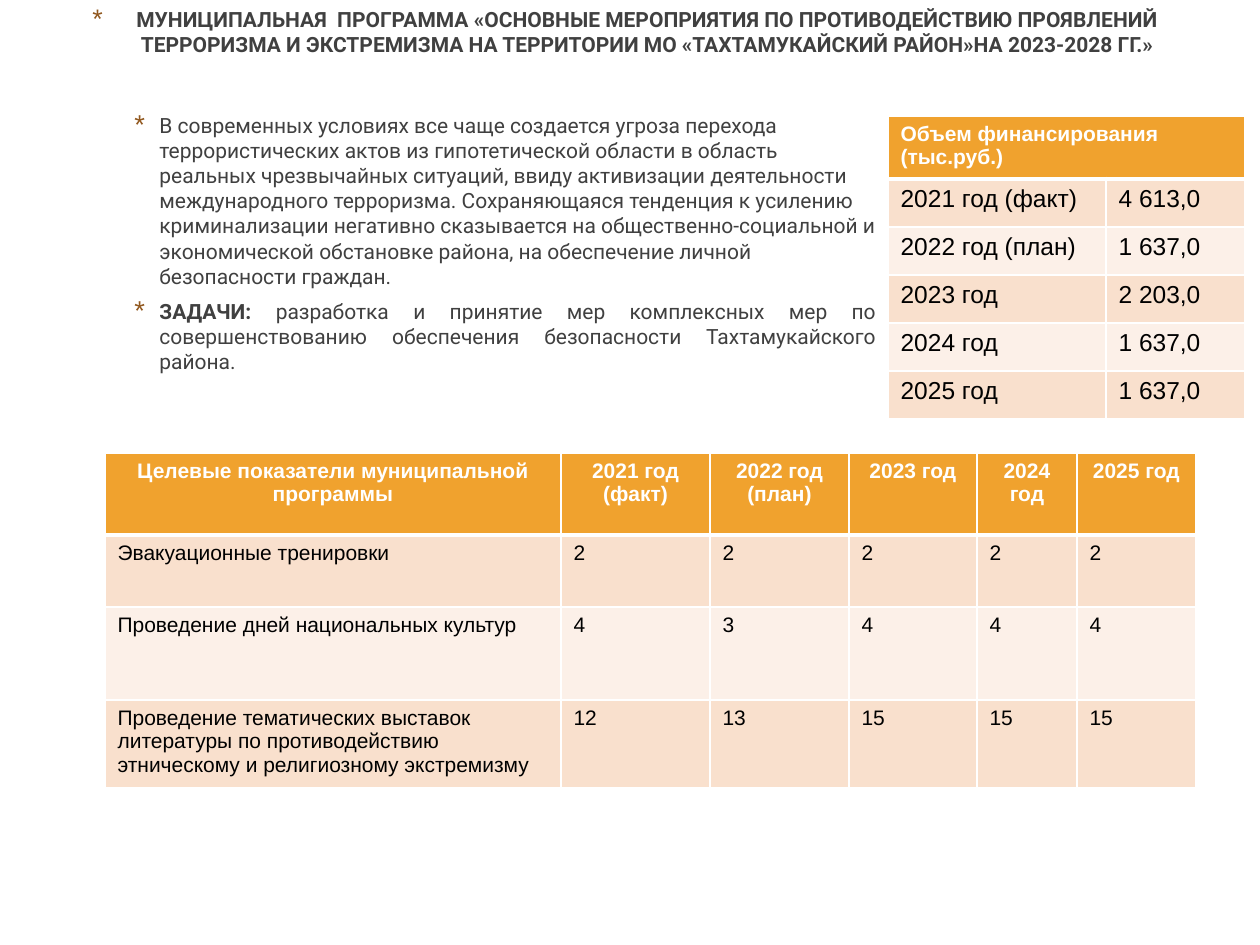
import lxml.etree
import pptx
import pptx.dml.color
import pptx.enum.text
import pptx.oxml.ns
import pptx.util

COLOURS = {
    "header": "F0A22E",
    "odd_row": "F9E0CD",
    "even_row": "FCF0E8",
    "border": "FFFFFF",
    "header_text": "FFFFFF",
    "cell_text": "000000",
    "text": "404040",
    "bullet": "91581F",
}
ALIGN = pptx.enum.text.PP_ALIGN
EMU_PER_INCH = 914400
PX_PER_INCH = 126


def emu(px):
    return pptx.util.Emu(round(px * EMU_PER_INCH / PX_PER_INCH))


def add_element(parent, tag, **attributes):
    return lxml.etree.SubElement(parent, pptx.oxml.ns.qn(tag), attributes)


class SlideBuilder:
    def __init__(self, page):
        self.page = page

    def add_span(self, para, words, colour, **font):
        span = para.add_run()
        span.text = words
        span.font.color.rgb = pptx.dml.color.RGBColor.from_string(COLOURS[colour])
        for name, value in font.items():
            setattr(span.font, name, value)

    def bullet(self, para, margin, hanging, percent):
        properties = para._p.get_or_add_pPr()
        properties.set("marL", str(emu(margin)))
        properties.set("indent", str(-emu(hanging)))
        colour = add_element(properties, "a:buClr")
        add_element(colour, "a:srgbClr", val=COLOURS["bullet"])
        add_element(properties, "a:buSzPct", val=str(percent * 1000))
        add_element(properties, "a:buFont", typeface="Arial")
        add_element(properties, "a:buChar", char="*")

    def bullet_text(self, left, top, width, height, paragraphs, margin, hanging, percent):
        box = self.page.shapes.add_textbox(*map(emu, (left, top, width, height)))
        frame = box.text_frame
        frame.word_wrap = True
        for index, (formats, spans) in enumerate(paragraphs):
            para = frame.add_paragraph() if index else frame.paragraphs[0]
            for name, value in formats.items():
                setattr(para, name, value)
            self.bullet(para, margin, hanging, percent)
            for words, bold in spans:
                self.add_span(para, words, "text", name="Roboto", size=pptx.util.Pt(12), bold=bold)

    def borders(self, cell, row):
        properties = cell._tc.get_or_add_tcPr()
        widths = {"L": 1, "R": 1, "T": 3 if row == 1 else 1, "B": 3 if row == 0 else 1}
        for position, (side, width) in enumerate(widths.items()):
            line = add_element(properties, f"a:ln{side}", w=str(pptx.util.Pt(width)))
            fill = add_element(line, "a:solidFill")
            add_element(fill, "a:srgbClr", val=COLOURS["border"])
            properties.insert(position, line)

    def table(self, left, top, columns, heights, rows, size, header_align):
        frame = self.page.shapes.add_table(
            len(rows), len(columns), *map(emu, (left, top, sum(columns), sum(heights)))
        )
        grid = frame.table
        for column, width in zip(grid.columns, columns):
            column.width = emu(width)
        for row, height in zip(grid.rows, heights):
            row.height = emu(height)
        if len(rows[0]) == 1:
            grid.cell(0, 0).merge(grid.cell(0, len(columns) - 1))
        for r in range(len(rows)):
            header = r == 0
            fill = "header" if header else "odd_row" if r % 2 else "even_row"
            for c in range(len(columns)):
                cell = grid.cell(r, c)
                cell.fill.solid()
                cell.fill.fore_color.rgb = pptx.dml.color.RGBColor.from_string(COLOURS[fill])
                self.borders(cell, r)
            for c, words in enumerate(rows[r]):
                para = grid.cell(r, c).text_frame.paragraphs[0]
                para.alignment = header_align if header else ALIGN.LEFT
                self.add_span(
                    para, words, "header_text" if header else "cell_text",
                    name="Arial", size=pptx.util.Pt(12 if header else size), bold=header,
                )


def main():
    deck = pptx.Presentation()
    deck.slide_width, deck.slide_height = emu(1260), emu(945)
    builder = SlideBuilder(deck.slides.add_slide(deck.slide_layouts[6]))

    title = (
        "МУНИЦИПАЛЬНАЯ  ПРОГРАММА «ОСНОВНЫЕ МЕРОПРИЯТИЯ ПО ПРОТИВОДЕЙСТВИЮ ПРОЯВЛЕНИЙ "
        "ТЕРРОРИЗМА И ЭКСТРЕМИЗМА НА ТЕРРИТОРИИ МО «ТАХТАМУКАЙСКИЙ РАЙОН»НА 2023-2028 ГГ.»"
    )
    builder.bullet_text(
        35, 0, 1181, 106, [({"alignment": ALIGN.CENTER}, [(title, True)])], 44, 44, 128
    )

    funding = [
        ["Объем финансирования (тыс.руб.)"],
        ["2021 год (факт)", "4 613,0"],
        ["2022 год (план)", "1 637,0"],
        ["2023 год", "2 203,0"],
        ["2024 год", "1 637,0"],
        ["2025 год", "1 637,0"],
    ]
    builder.table(888, 116, [218, 139], [58] + [48] * 5, funding, 14, ALIGN.LEFT)

    threat = (
        "В современных условиях все чаще создается угроза перехода террористических актов "
        "из гипотетической области в область реальных чрезвычайных ситуаций, ввиду активизации "
        "деятельности международного терроризма. Сохраняющаяся тенденция к усилению "
        "криминализации негативно сказывается на общественно-социальной и экономической "
        "обстановке района, на обеспечение личной безопасности граждан."
    )
    tasks = (
        "разработка и принятие мер комплексных мер по совершенствованию обеспечения "
        "безопасности Тахтамукайского района."
    )
    spacing = {"space_before": pptx.util.Pt(2.4), "space_after": pptx.util.Pt(3)}
    paragraphs = [
        ({**spacing, "alignment": ALIGN.LEFT}, [(threat, False)]),
        ({**spacing, "alignment": ALIGN.JUSTIFY}, [("ЗАДАЧИ: ", True), (tasks, False)]),
    ]
    builder.bullet_text(115, 106, 774, 318, paragraphs, 32, 25, 130)

    targets = [
        ["Целевые показатели муниципальной программы", "2021 год (факт)",
         "2022 год (план)", "2023 год", "2024 год", "2025 год"],
        ["Эвакуационные тренировки", "2", "2", "2", "2", "2"],
        ["Проведение дней национальных культур", "4", "3", "4", "4", "4"],
        ["Проведение тематических выставок литературы по противодействию "
         "этническому и религиозному экстремизму", "12", "13", "15", "15", "15"],
    ]
    builder.table(
        105, 453, [456, 149, 139, 128, 100, 119], [82, 72, 93, 72], targets, 12, ALIGN.CENTER
    )

    deck.save("out.pptx")


if __name__ == "__main__":
    main()
